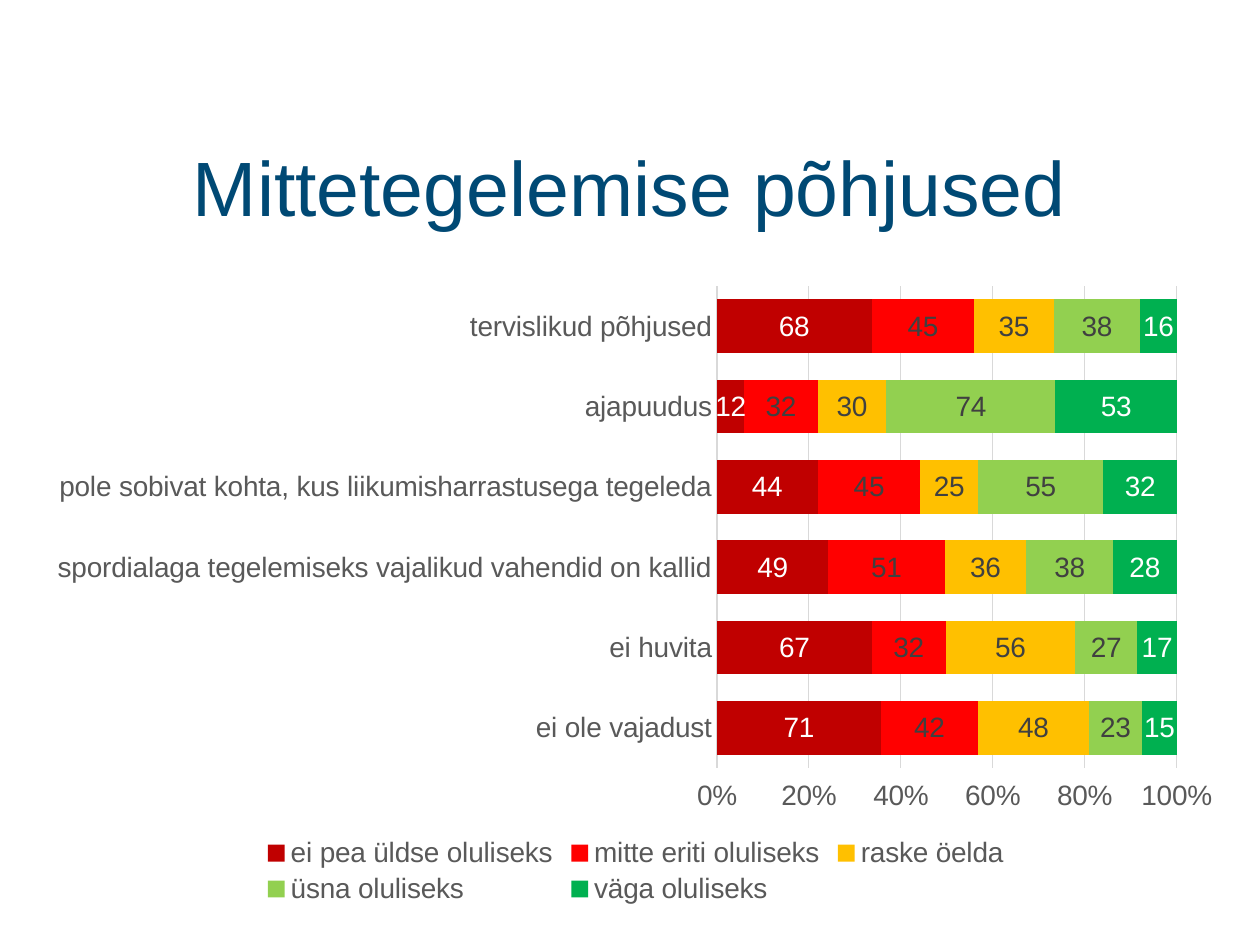
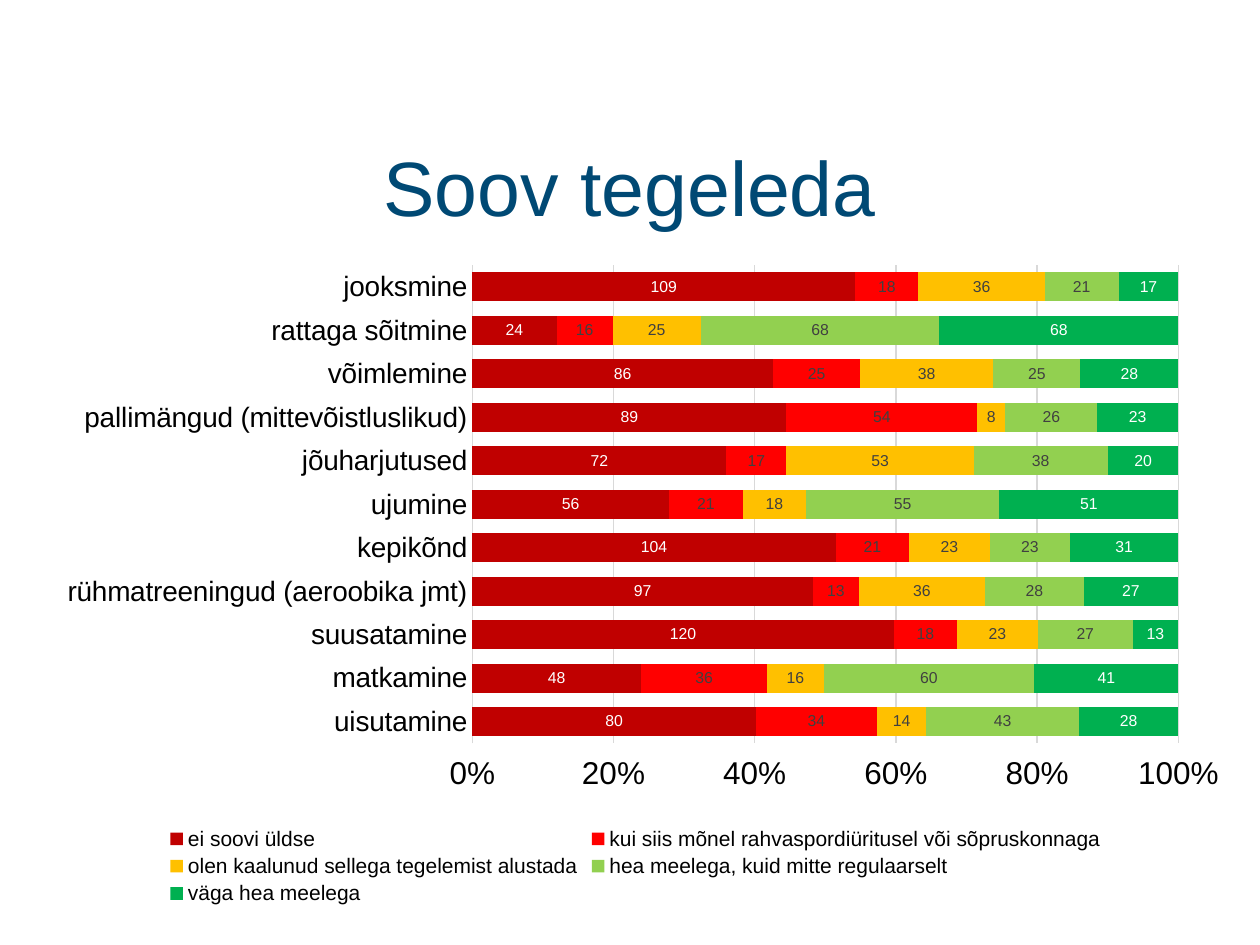
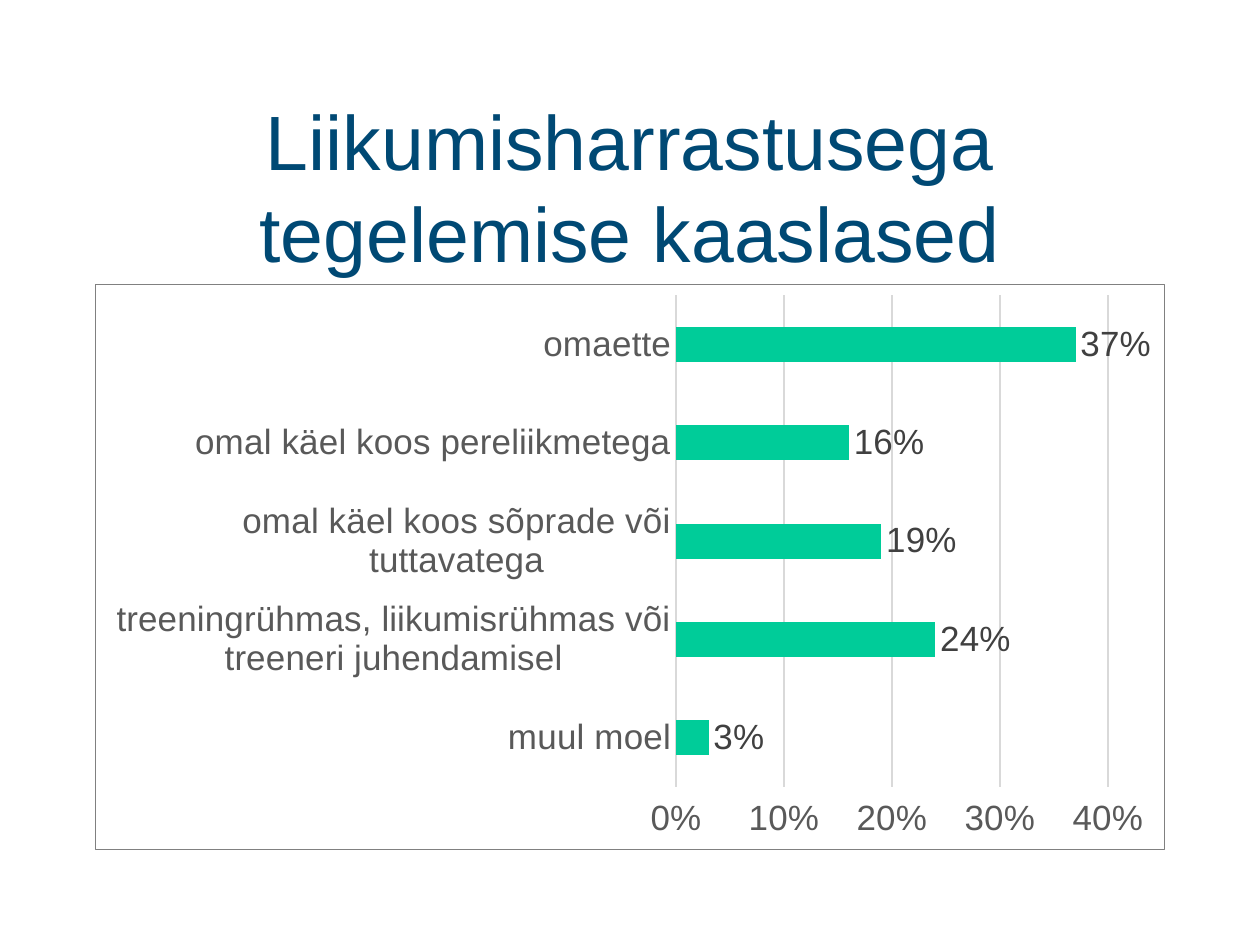
from dataclasses import dataclass
from typing import Any, NamedTuple, Optional

from pptx import Presentation
from pptx.chart.chart import Chart
from pptx.chart.data import CategoryChartData
from pptx.dml.color import RGBColor as Color
from pptx.enum.chart import XL_CHART_TYPE as ChartType
from pptx.enum.chart import XL_LABEL_POSITION as LabelPosition
from pptx.enum.chart import XL_LEGEND_POSITION as LegendPosition
from pptx.enum.chart import XL_TICK_LABEL_POSITION as TickLabelPosition
from pptx.enum.chart import XL_TICK_MARK as TickMark
from pptx.enum.text import MSO_ANCHOR as Anchor
from pptx.enum.text import PP_ALIGN as Align
from pptx.oxml import parse_xml
from pptx.oxml.ns import nsdecls
from pptx.slide import Slide
from pptx.util import Inches, Pt

COLUMNS, ROWS = 40, 30
SLIDE_WIDTH, SLIDE_HEIGHT = Inches(10), Inches(7.5)


@dataclass(frozen=True)
class Theme:
    font: str = "Arial"
    title: str = "004974"
    black: str = "000000"
    gray: str = "595959"
    dark: str = "404040"
    white: str = "FFFFFF"
    grid: str = "D9D9D9"
    border: str = "808080"
    bar: str = "00CC99"
    line_width: float = 0.75
    title_size: int = 44
    large: int = 20
    axis: int = 18
    body: int = 16
    legend: int = 12
    label: int = 9


THEME = Theme()


class Area(NamedTuple):
    """A place on the slide, in grid columns and rows."""
    column: float
    row: float
    columns: float
    rows: float

    def lengths(self) -> tuple[int, int, int, int]:
        across, down = SLIDE_WIDTH / COLUMNS, SLIDE_HEIGHT / ROWS
        return (round(self.column * across), round(self.row * down),
                round(self.columns * across), round(self.rows * down))


class PlotShare(NamedTuple):
    """The inner plot, as shares of the chart."""
    x: float
    y: float
    w: float
    h: float


class SeriesStyle(NamedTuple):
    fill: str
    label: str


class TextStyle(NamedTuple):
    size: int
    color: str


@dataclass(frozen=True)
class BarSlide:
    title: str
    area: Area
    kind: ChartType
    rows: dict[str, tuple[float, ...]]
    series: tuple[str, ...]
    styles: tuple[SeriesStyle, ...]
    gap: int
    category_text: TextStyle
    value_text: TextStyle
    label_size: int
    label_position: LabelPosition
    number_format: str
    axis_step: float
    axis_maximum: float
    overlap: int = 0
    legend_text: Optional[TextStyle] = None
    plot: Optional[PlotShare] = None
    border: Optional[str] = None


TITLE_AREA = Area(3, 3.4, 34, 5)
ANSWER_STYLES = (
    SeriesStyle("C00000", THEME.white),
    SeriesStyle("FF0000", THEME.dark),
    SeriesStyle("FFC000", THEME.dark),
    SeriesStyle("92D050", THEME.dark),
    SeriesStyle("00B050", THEME.white),
)
STACKED: dict[str, Any] = {
    "kind": ChartType.BAR_STACKED_100,
    "styles": ANSWER_STYLES,
    "gap": 50,
    "overlap": 100,
    "label_position": LabelPosition.CENTER,
    "number_format": "###0",
    "axis_step": 0.2,
    "axis_maximum": 1,
}
GRAY_BODY = TextStyle(THEME.body, THEME.gray)
GRAY_LARGE = TextStyle(THEME.large, THEME.gray)

SLIDES = (
    BarSlide(
        title="Mittetegelemise põhjused",
        area=Area(1.12, 8.68, 38.12, 20.2),
        series=("ei pea üldse oluliseks", "mitte eriti oluliseks", "raske öelda",
                "üsna oluliseks", "väga oluliseks"),
        rows={
            "tervislikud põhjused": (68, 45, 35, 38, 16),
            "ajapuudus": (12, 32, 30, 74, 53),
            "pole sobivat kohta, kus liikumisharrastusega tegeleda": (44, 45, 25, 55, 32),
            "spordialaga tegelemiseks vajalikud vahendid on kallid": (49, 51, 36, 38, 28),
            "ei huvita": (67, 32, 56, 27, 17),
            "ei ole vajadust": (71, 42, 48, 23, 15),
        },
        category_text=GRAY_BODY,
        value_text=GRAY_BODY,
        legend_text=GRAY_BODY,
        label_size=THEME.body,
        **STACKED,
    ),
    BarSlide(
        title="Soov tegeleda",
        area=Area(1.12, 8.4, 38.12, 20.48),
        series=("ei soovi üldse", "kui siis mõnel rahvaspordiüritusel või sõpruskonnaga",
                "olen kaalunud sellega tegelemist alustada",
                "hea meelega, kuid mitte regulaarselt", "väga hea meelega"),
        rows={
            "jooksmine": (109, 18, 36, 21, 17),
            "rattaga sõitmine": (24, 16, 25, 68, 68),
            "võimlemine": (86, 25, 38, 25, 28),
            "pallimängud (mittevõistluslikud)": (89, 54, 8, 26, 23),
            "jõuharjutused": (72, 17, 53, 38, 20),
            "ujumine": (56, 21, 18, 55, 51),
            "kepikõnd": (104, 21, 23, 23, 31),
            "rühmatreeningud (aeroobika jmt)": (97, 13, 36, 28, 27),
            "suusatamine": (120, 18, 23, 27, 13),
            "matkamine": (48, 36, 16, 60, 41),
            "uisutamine": (80, 34, 14, 43, 28),
        },
        category_text=TextStyle(THEME.body, THEME.black),
        value_text=TextStyle(THEME.axis, THEME.black),
        legend_text=TextStyle(THEME.legend, THEME.black),
        label_size=THEME.label,
        plot=PlotShare(0.364, 0, 0.588, 0.742),
        **STACKED,
    ),
    BarSlide(
        title="Liikumisharrastusega tegelemise kaaslased",
        area=Area(3, 9, 34, 18),
        kind=ChartType.BAR_CLUSTERED,
        series=("Series 1",),
        rows={
            "omaette": (0.37,),
            "omal käel koos pereliikmetega": (0.16,),
            "omal käel koos sõprade või tuttavatega": (0.19,),
            "treeningrühmas, liikumisrühmas või treeneri juhendamisel": (0.24,),
            "muul moel": (0.03,),
        },
        styles=(SeriesStyle(THEME.bar, THEME.dark),),
        gap=182,
        category_text=GRAY_LARGE,
        value_text=GRAY_LARGE,
        label_size=THEME.large,
        label_position=LabelPosition.OUTSIDE_END,
        number_format="###0%",
        axis_step=0.1,
        axis_maximum=0.4,
        border=THEME.border,
    ),
)


def set_values(target: Any, values: dict[str, Any]) -> None:
    for name, value in values.items():
        setattr(target, name, value)


def style_font(font: Any, style: TextStyle) -> None:
    set_values(font, {"name": THEME.font, "size": Pt(style.size), "bold": False})
    font.color.rgb = Color.from_string(style.color)


def style_line(line: Any) -> None:
    line.color.rgb = Color.from_string(THEME.grid)
    line.width = Pt(THEME.line_width)


def add_title(page: Slide, text: str) -> None:
    box = page.shapes.add_textbox(*TITLE_AREA.lengths())
    set_values(box.text_frame, {"word_wrap": True, "vertical_anchor": Anchor.MIDDLE})
    para = box.text_frame.paragraphs[0]
    para.alignment = Align.CENTER
    span = para.add_run()
    span.text = text
    style_font(span.font, TextStyle(THEME.title_size, THEME.title))


def style_axes(chart: Chart, content: BarSlide) -> None:
    """List categories from the top and keep the percentages at the bottom."""
    categories, values = chart.category_axis, chart.value_axis
    ticks = {"major_tick_mark": TickMark.NONE, "minor_tick_mark": TickMark.NONE}
    set_values(categories, ticks | {"reverse_order": True})
    set_values(values, ticks | {
        "tick_label_position": TickLabelPosition.HIGH,
        "has_major_gridlines": True,
        "minimum_scale": 0,
        "maximum_scale": content.axis_maximum,
        "major_unit": content.axis_step,
    })
    style_font(categories.tick_labels.font, content.category_text)
    style_font(values.tick_labels.font, content.value_text)
    set_values(values.tick_labels, {"number_format": "0%", "number_format_is_linked": False})
    style_line(categories.format.line)
    style_line(values.major_gridlines.format.line)
    values.format.line.fill.background()


def style_series(chart: Chart, content: BarSlide) -> None:
    plot = chart.plots[0]
    set_values(plot, {"gap_width": content.gap, "overlap": content.overlap,
                      "vary_by_categories": False})
    for series, style in zip(plot.series, content.styles):
        series.format.fill.solid()
        series.format.fill.fore_color.rgb = Color.from_string(style.fill)
        labels = series.data_labels
        set_values(labels, {
            "show_value": True,
            "position": content.label_position,
            "number_format": content.number_format,
            "number_format_is_linked": False,
        })
        style_font(labels.font, TextStyle(content.label_size, style.label))


def add_legend(chart: Chart, style: TextStyle) -> None:
    chart.has_legend = True
    set_values(chart.legend, {"position": LegendPosition.BOTTOM, "include_in_layout": False})
    style_font(chart.legend.font, style)


def place_plot(chart: Chart, share: PlotShare) -> None:
    plot_area = chart.element.xpath("c:chart/c:plotArea")[0]
    for layout in plot_area.xpath("c:layout"):
        plot_area.remove(layout)
    modes = "".join(f'<c:{side}Mode val="edge"/>' for side in "xy")
    sizes = "".join(f'<c:{side} val="{value}"/>' for side, value in share._asdict().items())
    plot_area.insert(0, parse_xml(
        f'<c:layout {nsdecls("c")}><c:manualLayout><c:layoutTarget val="inner"/>'
        f'{modes}{sizes}</c:manualLayout></c:layout>'))


def add_border(chart: Chart, color: str) -> None:
    chart.element.xpath("c:txPr")[0].addprevious(parse_xml(
        f'<c:spPr {nsdecls("c", "a")}><a:noFill/><a:ln w="{Pt(THEME.line_width)}">'
        f'<a:solidFill><a:srgbClr val="{color}"/></a:solidFill></a:ln></c:spPr>'))


def add_bar_chart(page: Slide, content: BarSlide) -> None:
    data = CategoryChartData(number_format=content.number_format)
    data.categories = list(content.rows)
    for name, values in zip(content.series, zip(*content.rows.values())):
        data.add_series(name, values)
    chart = page.shapes.add_chart(content.kind, *content.area.lengths(), data).chart
    set_values(chart, {"has_title": False, "has_legend": False})
    style_font(chart.font, TextStyle(content.label_size, THEME.black))
    style_axes(chart, content)
    style_series(chart, content)
    if content.legend_text:
        add_legend(chart, content.legend_text)
    if content.plot:
        place_plot(chart, content.plot)
    if content.border:
        add_border(chart, content.border)


def main() -> None:
    deck = Presentation()
    set_values(deck, {"slide_width": SLIDE_WIDTH, "slide_height": SLIDE_HEIGHT})
    blank = deck.slide_layouts[6]
    for content in SLIDES:
        page = deck.slides.add_slide(blank)
        add_title(page, content.title)
        add_bar_chart(page, content)
    deck.save("out.pptx")


if __name__ == "__main__":
    main()
